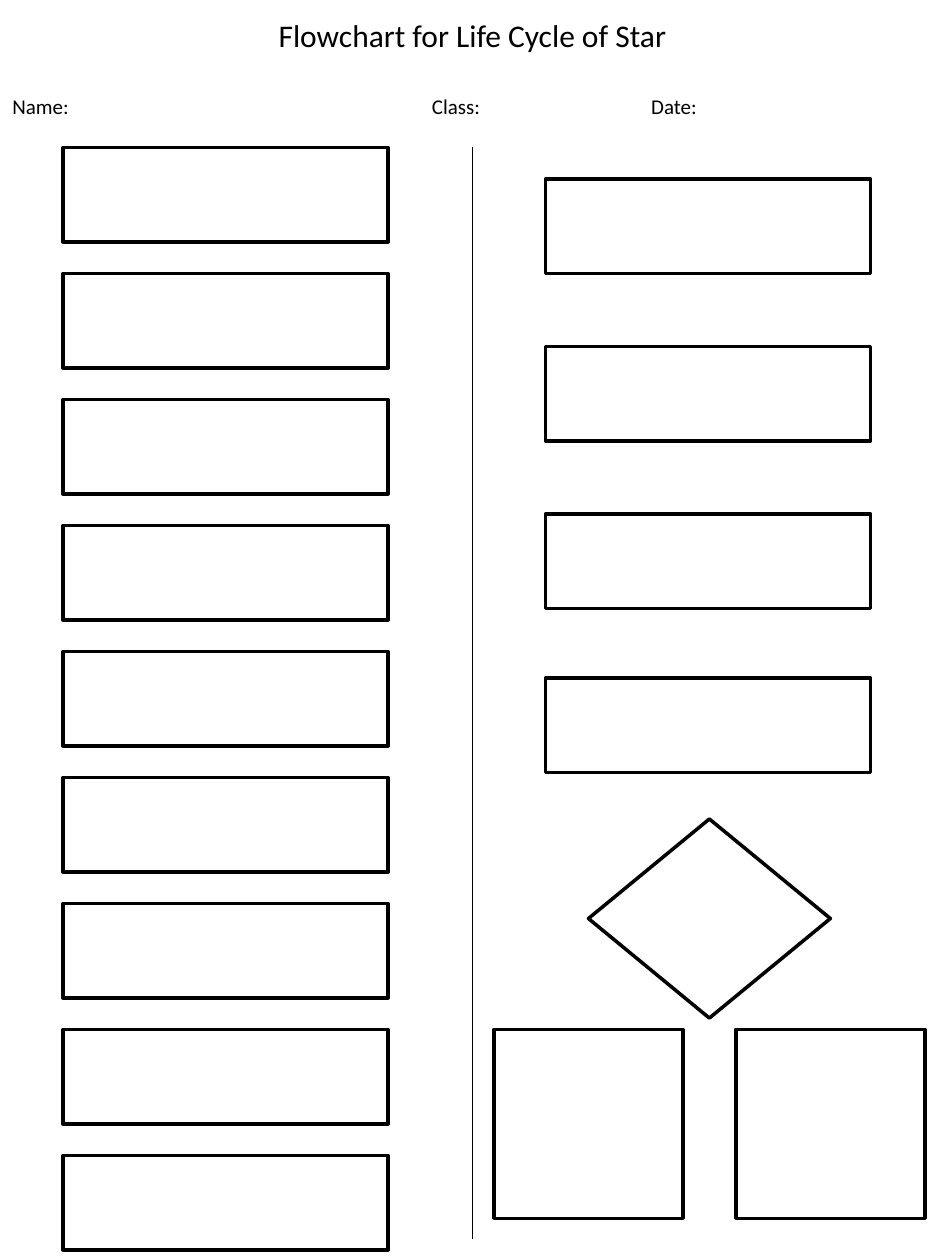
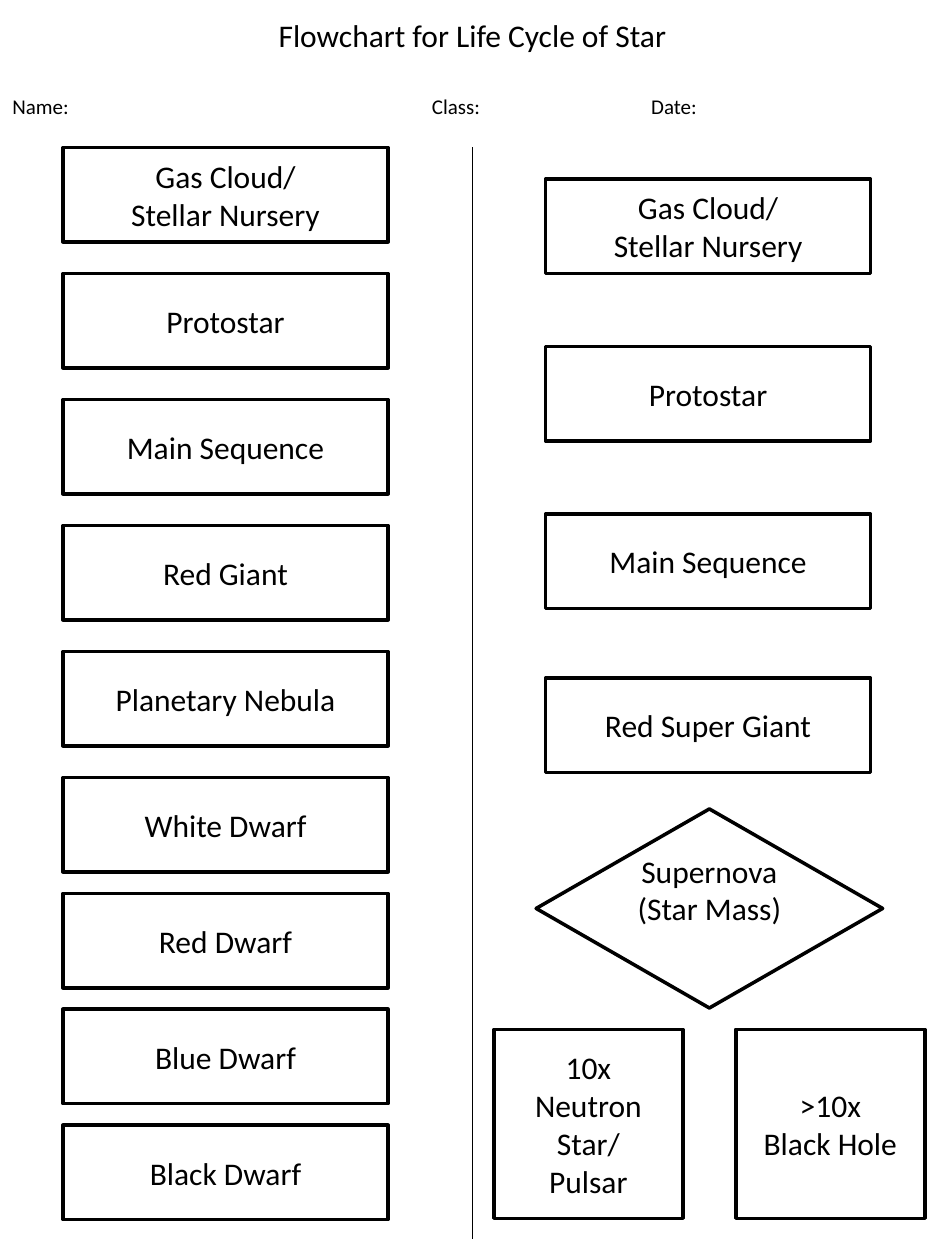
from dataclasses import dataclass
from pptx import Presentation, util as u
from pptx.dml.color import RGBColor
from pptx.enum import shapes, text
from pptx.oxml.ns import qn
from lxml import etree


@dataclass(frozen=True)
class Theme:
    """Colours, type and line widths shared by the slides."""
    ink: RGBColor = RGBColor(0, 0, 0)
    paper: RGBColor = RGBColor(255, 255, 255)
    font: str = "Calibri"
    body: int = 18
    small: int = 12
    outline: float = 2
    divider: float = 0.75


@dataclass(frozen=True)
class Box:
    """A region of the page in inches."""
    left: float
    top: float
    width: float
    height: float

    def inset(self, left, top, width, height):
        """Return a box placed relative to this one."""
        return Box(self.left + left, self.top + top, width, height)

    def lengths(self):
        """Return left, top, width and height as lengths."""
        return [u.Inches(n) for n in (self.left, self.top, self.width, self.height)]


THEME = Theme()
PAGE = Box(0, 0, 7.5, 10)
HEADER = Box(0, 0.08, 7.5, 1.09)
SMALL_STAR = Box(0.5, 1.17, 2.58, 8.75)
LARGE_STAR = Box(3.92, 1.42, 3.42, 8.25)
STEP_HEIGHT = 0.75
LARGE_STEP_TOPS = (0, 1.33, 2.66, 3.96)

SMALL_STAGES = ("Gas Cloud/\nStellar Nursery", "Protostar", "Main Sequence",
                "Red Giant", "Planetary Nebula", "White Dwarf", "Red Dwarf",
                "Blue Dwarf", "Black Dwarf")
LARGE_STAGES = SMALL_STAGES[:3] + ("Red Super Giant",)
SUPERNOVA = "Supernova\n(Star Mass)"
REMNANTS = ("10x\nNeutron Star/\nPulsar", ">10x\nBlack Hole")


def write(frame, lines, size, align):
    """Write one paragraph per line in the shared type style."""
    for index, line in enumerate(lines):
        para = frame.add_paragraph() if index else frame.paragraphs[0]
        para.alignment = align
        span = para.add_run()
        span.text = line
        span.font.size = u.Pt(size)
        span.font.name = THEME.font
        span.font.color.rgb = THEME.ink


def add_stage(page, box, label, kind=shapes.MSO_SHAPE.RECTANGLE):
    """Draw an outlined stage, with its label if it has one."""
    stage = page.shapes.add_shape(kind, *box.lengths())
    stage.shadow.inherit = False
    stage.fill.background()
    stage.line.color.rgb = THEME.ink
    stage.line.width = u.Pt(THEME.outline)
    frame = stage.text_frame
    frame.word_wrap = True
    frame.vertical_anchor = text.MSO_ANCHOR.MIDDLE
    if label:
        write(frame, label.split("\n"), THEME.body, text.PP_ALIGN.CENTER)
    return stage


def add_header(page, box):
    """Place the title and the line of fields to fill in."""
    title = page.shapes.title
    title.left, title.top, title.width, title.height = box.inset(0, 0, box.width, 0.41).lengths()
    title.text_frame.vertical_anchor = text.MSO_ANCHOR.TOP
    title.text_frame.auto_size = text.MSO_AUTO_SIZE.NONE
    write(title.text_frame, ["Flowchart for Life Cycle of Star"], THEME.body, text.PP_ALIGN.CENTER)

    fields = page.shapes.add_textbox(*box.inset(0, 0.61, box.width, 0.3).lengths())
    frame = fields.text_frame
    frame.word_wrap = True
    stops = etree.SubElement(frame.paragraphs[0]._p.get_or_add_pPr(), qn("a:tabLst"))
    for position in (3.33, 5.07):
        etree.SubElement(stops, qn("a:tab"), pos=str(u.Inches(position)), algn="l")
    write(frame, ["Name:\tClass:\tDate:"], THEME.small, text.PP_ALIGN.LEFT)


def add_divider(page, box):
    """Draw the vertical rule between the two columns."""
    middle = u.Inches(box.left + box.width / 2)
    rule = page.shapes.add_connector(shapes.MSO_CONNECTOR.STRAIGHT, middle, u.Inches(1.17),
                                     middle, u.Inches(box.height - 0.17))
    rule.line.color.rgb = THEME.ink
    rule.line.width = u.Pt(THEME.divider)
    etree.SubElement(rule._element.spPr, qn("a:effectLst"))


def add_small_star(page, box, labels, dwarf_pitch):
    """Stack the small star stages, with their own pitch after the white dwarf."""
    for index, label in enumerate(labels):
        top = min(index, 5) + max(index - 5, 0) * dwarf_pitch
        add_stage(page, box.inset(0, top, box.width, STEP_HEIGHT), label)


def add_large_star(page, box, labels, supernova, remnants, diamond):
    """Stack the large star stages above the supernova and its remnants."""
    for top, label in zip(LARGE_STEP_TOPS, labels):
        add_stage(page, box.inset(0.41, top, 2.58, STEP_HEIGHT), label)
    width, top = diamond
    burst = add_stage(page, box.inset((box.width - width) / 2, top, width, 1.58), supernova,
                      shapes.MSO_SHAPE.DIAMOND)
    burst.text_frame.margin_bottom = u.Inches(0.35)
    side = 1.5
    for index, label in enumerate(remnants):
        left = index * (box.width - side)
        add_stage(page, box.inset(left, box.height - side, side, side), label)


def add_flowchart(deck, filled):
    """Add one worksheet page, blank or filled in."""
    page = deck.slides.add_slide(deck.slide_layouts.get_by_name("Title Only"))
    page.background.fill.solid()
    page.background.fill.fore_color.rgb = THEME.paper
    add_header(page, HEADER)
    add_divider(page, PAGE)
    if filled:
        add_small_star(page, SMALL_STAR, SMALL_STAGES, 0.92)
        add_large_star(page, LARGE_STAR, LARGE_STAGES, SUPERNOVA, REMNANTS, (2.75, 5))
    else:
        add_small_star(page, SMALL_STAR, [""] * len(SMALL_STAGES), 1)
        add_large_star(page, LARGE_STAR, [""] * len(LARGE_STAGES), "", [""] * len(REMNANTS),
                       (1.92, 5.08))


def main():
    """Build the blank worksheet and its answer page."""
    deck = Presentation()
    deck.slide_width, deck.slide_height = u.Inches(PAGE.width), u.Inches(PAGE.height)
    for filled in (False, True):
        add_flowchart(deck, filled)
    deck.save("out.pptx")


if __name__ == "__main__":
    main()
